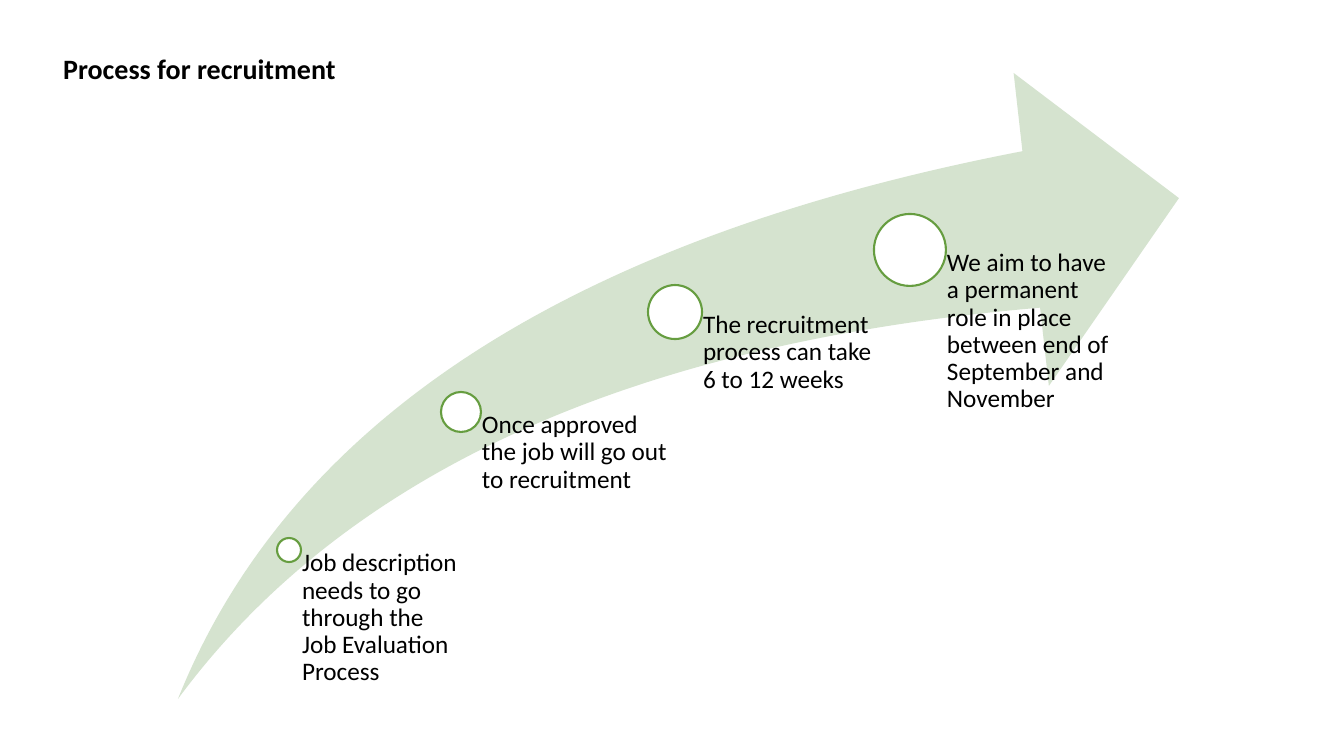
import pptx
import pptx.util
import pptx.dml.color
import pptx.enum.shapes
import pptx.enum.text

EMU_PER_PX = 914400 / 100.8
FONT = "Calibri"
BLACK, WHITE, GREEN, PALE_GREEN = "000000", "FFFFFF", "669D40", "D5E3CF"

# Step text, centre of its circle within the arrow's box, radius, text width
STEPS = [
    ("Job description needs to go through the Job Evaluation Process", 111, 477, 12, 171),
    ("Once approved the job will go out to recruitment", 283, 339, 20, 211),
    ("The recruitment process can take 6 to 12 weeks", 497, 239, 27, 211),
    ("We aim to have a permanent role in place between end of September and November",
     732, 177, 36, 211),
]


def px(length):
    return pptx.util.Emu(round(length * EMU_PER_PX))


def color(hex_string):
    return pptx.dml.color.RGBColor.from_string(hex_string)


def set_font(paragraph, size, bold=False):
    paragraph.alignment = pptx.enum.text.PP_ALIGN.LEFT
    paragraph.font.name = FONT
    paragraph.font.size = pptx.util.Pt(size)
    paragraph.font.bold = bold
    paragraph.font.color.rgb = color(BLACK)


def add_filled_shape(shapes, kind, box, fill, line=None):
    shape = shapes.add_shape(kind, *map(px, box))
    shape.shadow.inherit = False
    shape.fill.solid()
    shape.fill.fore_color.rgb = color(fill)
    if line:
        shape.line.color.rgb = color(line)
        shape.line.width = pptx.util.Pt(1.5)
    else:
        shape.line.fill.background()
    return shape


def add_title(slide, box):
    title = slide.shapes.title
    title.left, title.top, title.width, title.height = map(px, box)
    frame = title.text_frame
    frame.text = "Process for recruitment"
    frame.auto_size = pptx.enum.text.MSO_AUTO_SIZE.SHAPE_TO_FIT_TEXT
    set_font(frame.paragraphs[0], 20, bold=True)


def add_step(shapes, text, center_x, center_y, radius, width, bottom):
    add_filled_shape(
        shapes, pptx.enum.shapes.MSO_SHAPE.OVAL,
        (center_x - radius, center_y - radius, 2 * radius, 2 * radius), WHITE, GREEN)
    # The text starts at the circle's centre and is indented past its edge
    label = shapes.add_textbox(px(center_x), px(center_y), px(width), px(bottom - center_y))
    frame = label.text_frame
    frame.word_wrap = True
    frame.margin_left = px(radius + 1)
    frame.margin_top = frame.margin_right = frame.margin_bottom = 0
    frame.text = text
    paragraph = frame.paragraphs[0]
    paragraph.line_spacing = 0.9
    set_font(paragraph, 18)


def add_process(slide, box):
    left, top, width, height = box
    shapes = slide.shapes.add_group_shape().shapes
    # Rising arrow
    arrow = add_filled_shape(
        shapes, pptx.enum.shapes.MSO_SHAPE.SWOOSH_ARROW, box, PALE_GREEN)
    arrow.adjustments[0] = arrow.adjustments[1] = 0.25
    # Steps along the arrow
    for text, x, y, radius, text_width in STEPS:
        add_step(shapes, text, left + x, top + y, radius, text_width, top + height)


def main():
    presentation = pptx.Presentation()
    presentation.slide_width, presentation.slide_height = px(1344), px(756)
    slide = presentation.slides.add_slide(presentation.slide_layouts[5])
    add_title(slide, (53, 46, 813, 44))
    add_process(slide, (178, 73, 1001, 626))
    presentation.save("out.pptx")


if __name__ == "__main__":
    main()
